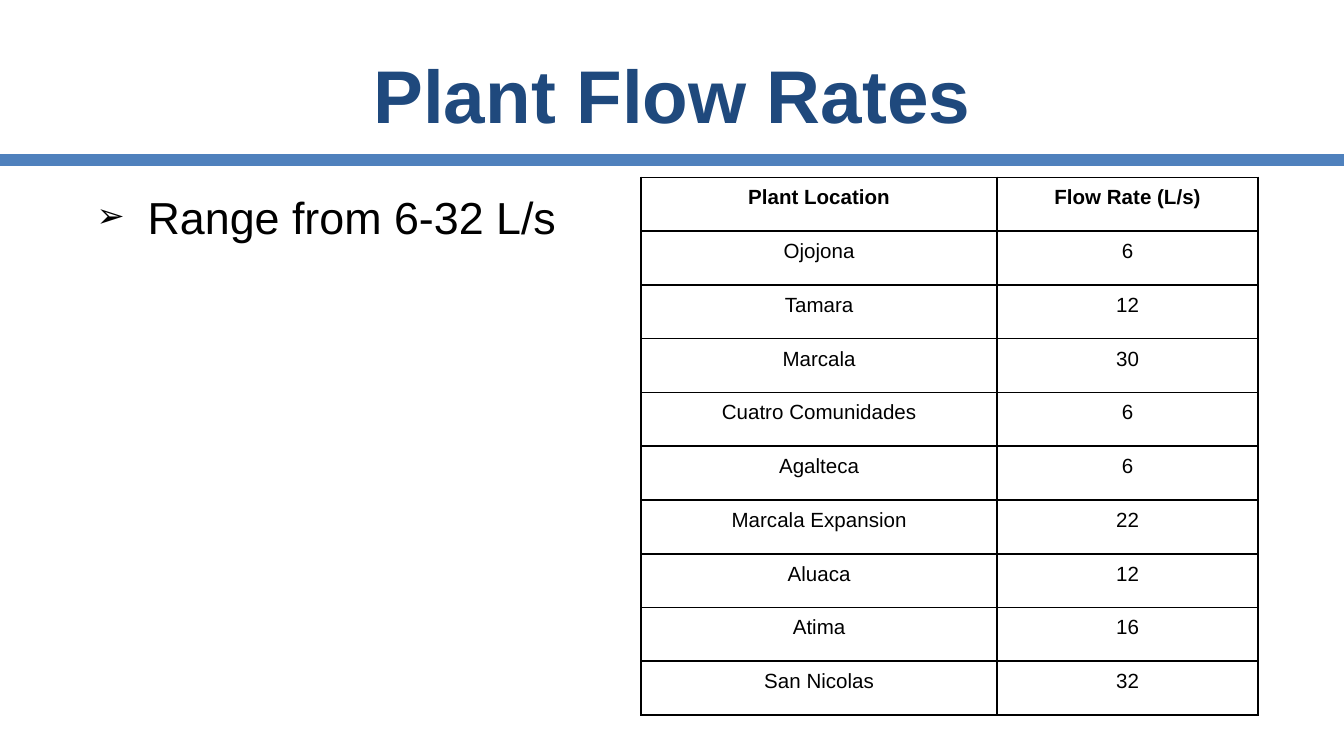
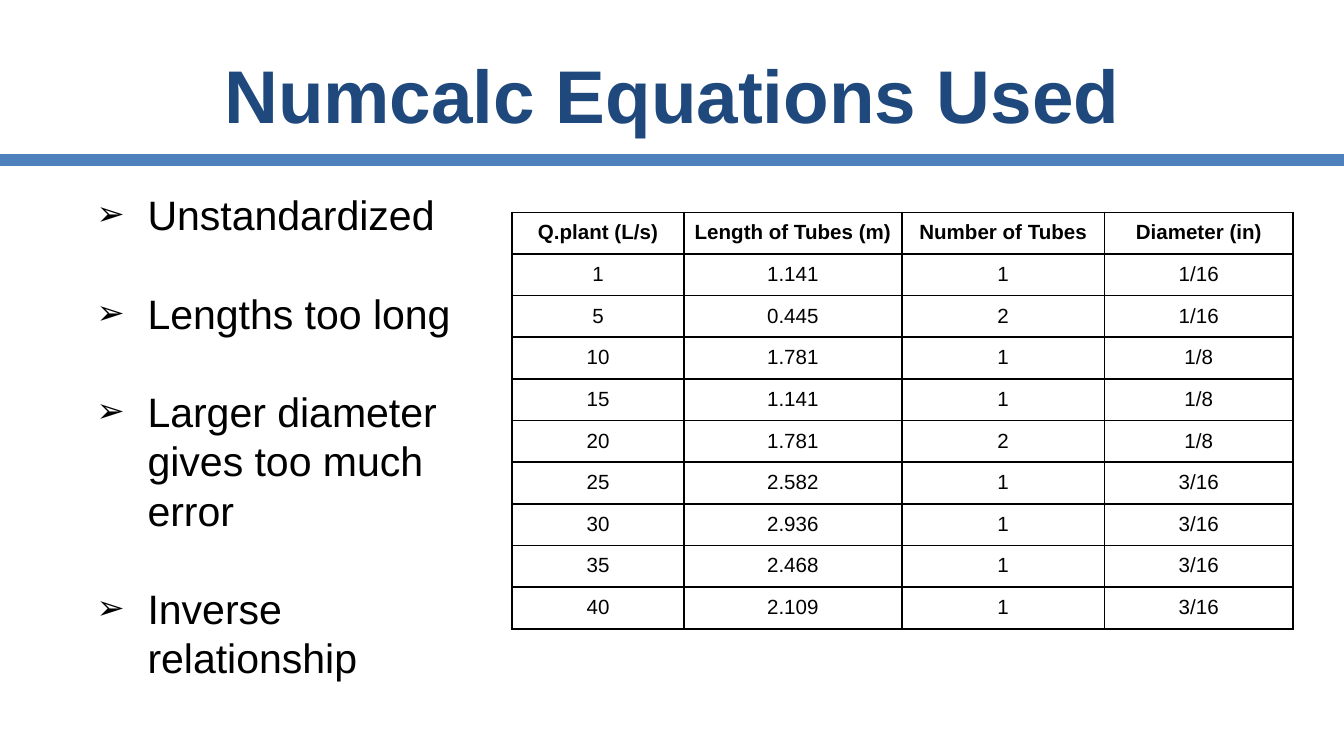
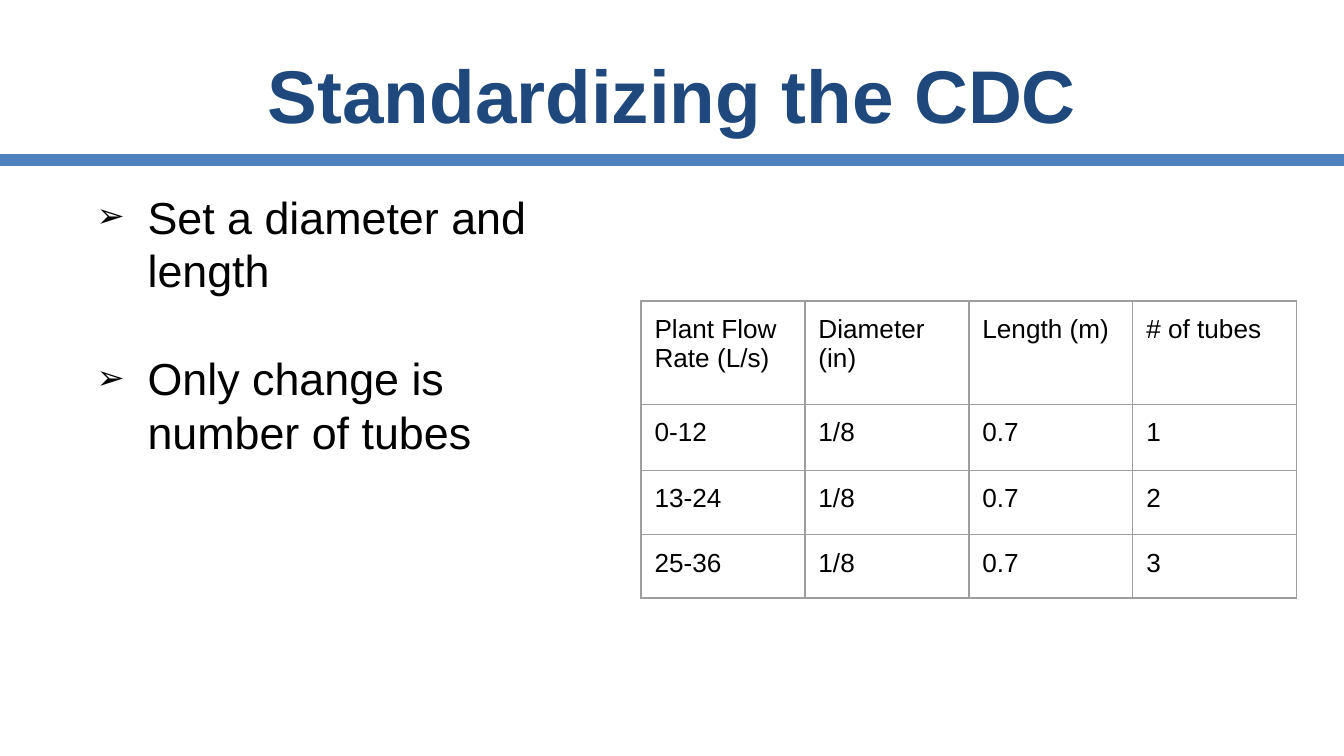
from dataclasses import dataclass

from lxml import etree
from pptx import Presentation
from pptx.dml.color import RGBColor
from pptx.enum.shapes import MSO_CONNECTOR
from pptx.enum.text import MSO_ANCHOR, MSO_AUTO_SIZE, PP_ALIGN
from pptx.oxml.ns import qn
from pptx.util import Inches, Pt

STRAIGHT = MSO_CONNECTOR.STRAIGHT
MIDDLE, TOP = MSO_ANCHOR.MIDDLE, MSO_ANCHOR.TOP
NO_FIT = MSO_AUTO_SIZE.NONE
LEFT, CENTER = PP_ALIGN.LEFT, PP_ALIGN.CENTER
TITLE_ONLY = 5


@dataclass(frozen=True)
class Theme:
    """Colours, type sizes and insets shared by all slides."""
    font: str = "Arial"
    title_color: str = "1F497D"
    rule_color: str = "4F81BD"
    ink: str = "000000"
    title_size: int = 40
    rule_width: int = 6
    bullet_size: int = 18
    gap_ratio: float = 1.2
    inset: float = 0.1


@dataclass(frozen=True)
class TableStyle:
    """Look of one kind of table."""
    size: int
    border: str
    border_width: float
    inset: float
    align: PP_ALIGN
    bold_header: bool


THEME = Theme()
DATA_TABLE = TableStyle(11, THEME.ink, 1, 1 / 15, CENTER, True)
PLAN_TABLE = TableStyle(14, "9E9E9E", 0.75, 0.1, LEFT, False)

TITLE_BOX = (0.5, 0.23, 9, 0.94)
WIDE_BULLETS = (0.5, 1.31, 4.03, 4.07)
NARROW_BULLETS = (0.5, 1.31, 3.17, 4.07)

PLANT_FLOWS = [
    ("Plant Location", "Flow Rate (L/s)"),
    ("Ojojona", "6"),
    ("Tamara", "12"),
    ("Marcala", "30"),
    ("Cuatro Comunidades", "6"),
    ("Agalteca", "6"),
    ("Marcala Expansion", "22"),
    ("Aluaca", "12"),
    ("Atima", "16"),
    ("San Nicolas", "32"),
]
TUBE_RESULTS = [
    ("Q.plant (L/s)", "Length of Tubes (m)", "Number of Tubes", "Diameter (in)"),
    ("1", "1.141", "1", "1/16"),
    ("5", "0.445", "2", "1/16"),
    ("10", "1.781", "1", "1/8"),
    ("15", "1.141", "1", "1/8"),
    ("20", "1.781", "2", "1/8"),
    ("25", "2.582", "1", "3/16"),
    ("30", "2.936", "1", "3/16"),
    ("35", "2.468", "1", "3/16"),
    ("40", "2.109", "1", "3/16"),
]
STANDARD_PLAN = [
    ("Plant Flow Rate (L/s)", "Diameter (in)", "Length (m)", "# of tubes"),
    ("0-12", "1/8", "0.7", "1"),
    ("13-24", "1/8", "0.7", "2"),
    ("25-36", "1/8", "0.7", "3"),
]


def style_font(paragraph, size, color, bold=False):
    """Set the font of a whole paragraph."""
    font = paragraph.font
    font.name, font.size, font.bold = THEME.font, Pt(size), bold
    font.color.rgb = RGBColor.from_string(color)


def set_insets(holder, inset):
    """Give a text frame or a cell the same inset on all sides."""
    holder.margin_left = holder.margin_right = Inches(inset)
    holder.margin_top = holder.margin_bottom = Inches(inset)


def prepare_frame(frame, anchor):
    """Apply wrapping, insets and anchor to a text frame."""
    frame.word_wrap = True
    frame.auto_size = NO_FIT
    frame.vertical_anchor = anchor
    set_insets(frame, THEME.inset)


def add_title_rule(slide, width):
    """Draw the rule under the title and move it to the slide's layout."""
    y = Inches(1.19)
    rule = slide.shapes.add_connector(STRAIGHT, 0, y, width, y)
    rule.line.color.rgb = RGBColor.from_string(THEME.rule_color)
    rule.line.width = Pt(THEME.rule_width)
    etree.SubElement(rule.element.spPr, qn("a:effectLst"))
    slide.slide_layout.shapes.element.append(rule.element)


def add_titled_slide(prs, text):
    """Add a slide with its formatted title."""
    slide = prs.slides.add_slide(prs.slide_layouts[TITLE_ONLY])
    title = slide.shapes.title
    title.left, title.top, title.width, title.height = map(Inches, TITLE_BOX)
    prepare_frame(title.text_frame, MIDDLE)
    title.text_frame.text = text
    heading = title.text_frame.paragraphs[0]
    heading.alignment = CENTER
    style_font(heading, THEME.title_size, THEME.title_color, bold=True)
    return slide


def set_arrow_bullet(paragraph, size):
    """Give a paragraph a hanging arrow bullet of constant size."""
    props = paragraph._p.get_or_add_pPr()
    props.set("marL", str(Inches(0.5)))
    props.set("indent", str(Inches(-0.38)))
    color = etree.SubElement(props, qn("a:buClr"))
    etree.SubElement(color, qn("a:srgbClr"), val=THEME.ink)
    percent = round(100 * THEME.bullet_size / size)
    etree.SubElement(props, qn("a:buSzPct"), val=str(percent * 1000))
    etree.SubElement(props, qn("a:buFont"), typeface=THEME.font)
    etree.SubElement(props, qn("a:buChar"), char="➢")


def add_bullets(slide, box, points, size):
    """Add bullet points with one line of space between them."""
    frame = slide.shapes.add_textbox(*map(Inches, box)).text_frame
    prepare_frame(frame, TOP)
    for index, point in enumerate(points):
        paragraph = frame.add_paragraph() if index else frame.paragraphs[0]
        paragraph.text = point
        set_arrow_bullet(paragraph, size)
        paragraph.space_before = Pt(THEME.gap_ratio * size if index else 0)
        style_font(paragraph, size, THEME.ink)


def set_borders(cell, color, width):
    """Draw all four borders of a cell."""
    props = cell._tc.get_or_add_tcPr()
    for side in ("lnL", "lnR", "lnT", "lnB"):
        border = etree.SubElement(props, qn(f"a:{side}"), w=str(Pt(width)))
        fill = etree.SubElement(border, qn("a:solidFill"))
        etree.SubElement(fill, qn("a:srgbClr"), val=color)


def add_grid(slide, corner, widths, heights, rows, style):
    """Add a bordered table with its top left at the given corner."""
    left, top = corner
    bounds = map(Inches, (left, top, sum(widths), sum(heights)))
    table = slide.shapes.add_table(len(rows), len(widths), *bounds).table
    table.first_row = table.horz_banding = False
    for column, width in zip(table.columns, widths):
        column.width = Inches(width)
    for row, height in zip(table.rows, heights):
        row.height = Inches(height)
    for r, values in enumerate(rows):
        for c, value in enumerate(values):
            cell = table.cell(r, c)
            cell.text = value
            set_borders(cell, style.border, style.border_width)
            cell.fill.background()
            set_insets(cell, style.inset)
            paragraph = cell.text_frame.paragraphs[0]
            paragraph.alignment = style.align
            style_font(paragraph, style.size, THEME.ink, style.bold_header and r == 0)


def build_flow_rates(prs):
    """Build the slide of plant flow rates."""
    slide = add_titled_slide(prs, "Plant Flow Rates")
    add_title_rule(slide, prs.slide_width)
    add_bullets(slide, WIDE_BULLETS, ["Range from 6-32 L/s"], 24)
    add_grid(slide, (4.77, 1.32), (2.65, 1.94), [0.4] * len(PLANT_FLOWS),
             PLANT_FLOWS, DATA_TABLE)


def build_equations(prs):
    """Build the slide of calculated tube sizes."""
    slide = add_titled_slide(prs, "Numcalc Equations Used")
    points = ["Unstandardized", "Lengths too long",
              "Larger diameter gives too much error", "Inverse relationship"]
    add_bullets(slide, NARROW_BULLETS, points, 22)
    add_grid(slide, (3.81, 1.58), (1.28, 1.62, 1.51, 1.4),
             [0.31] * len(TUBE_RESULTS), TUBE_RESULTS, DATA_TABLE)


def build_standardizing(prs):
    """Build the slide of the standardized plan."""
    slide = add_titled_slide(prs, "Standardizing the CDC")
    points = ["Set a diameter and length", "Only change is number of tubes"]
    add_bullets(slide, WIDE_BULLETS, points, 24)
    add_grid(slide, (4.77, 2.24), [1.22] * 4, (0.77, 0.49, 0.48, 0.47),
             STANDARD_PLAN, PLAN_TABLE)


def main():
    """Build and save the presentation."""
    prs = Presentation()
    prs.slide_width = Inches(10)
    prs.slide_height = prs.slide_width * 9 // 16
    build_flow_rates(prs)
    build_equations(prs)
    build_standardizing(prs)
    prs.save("out.pptx")


if __name__ == "__main__":
    main()
